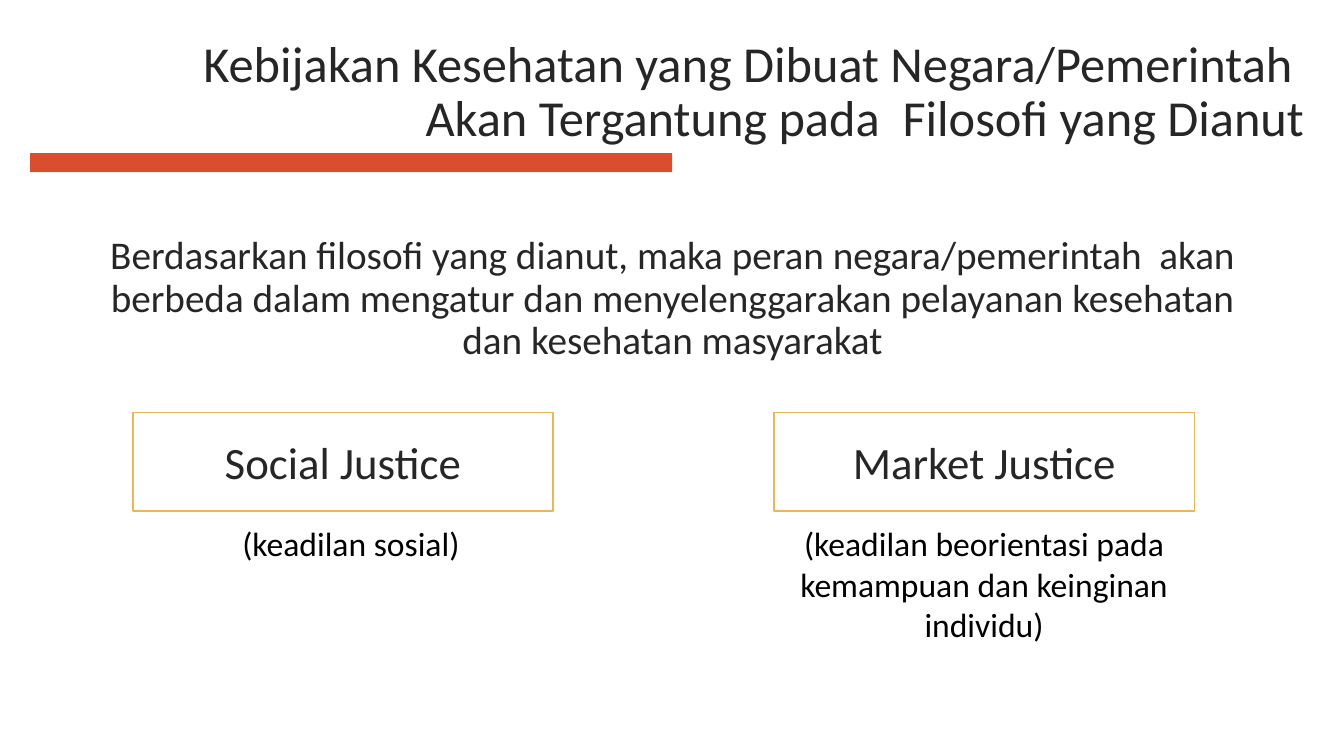
"""Build a slide on how a state's philosophy shapes its health policy."""
from pptx import Presentation
from pptx import util as u
from pptx.dml.color import RGBColor
from pptx.enum import shapes, text


def color(hex_string):
    return RGBColor.from_string(hex_string)


def write(shape, content, size, ink, align=text.PP_ALIGN.CENTER, anchor=text.MSO_ANCHOR.TOP):
    frame = shape.text_frame
    frame.word_wrap = True
    frame.vertical_anchor = anchor
    paragraph = frame.paragraphs[0]
    paragraph.text = content
    paragraph.alignment = align
    paragraph.font.name = "Calibri"
    paragraph.font.size = u.Pt(size)
    paragraph.font.color.rgb = color(ink)
    return paragraph


DARK = "262626"
MIDDLE = text.MSO_ANCHOR.MIDDLE

presentation = Presentation()
presentation.slide_width = u.Cm(33.87)
presentation.slide_height = u.Cm(19.05)
slide = presentation.slides.add_slide(presentation.slide_layouts[6])

title = slide.shapes.add_textbox(u.Cm(3.91), u.Cm(0.51), u.Cm(29.21), u.Cm(3.68))
heading = write(
    title,
    "Kebijakan Kesehatan yang Dibuat Negara/Pemerintah  Akan Tergantung pada  Filosofi yang Dianut",
    36, DARK, text.PP_ALIGN.RIGHT, MIDDLE,
)
heading.line_spacing = 0.9

body = slide.shapes.add_textbox(u.Cm(2.34), u.Cm(5.82), u.Cm(29.21), u.Cm(11.35))
statement = write(
    body,
    "Berdasarkan filosofi yang dianut, maka peran negara/pemerintah  akan berbeda dalam "
    "mengatur dan menyelenggarakan pelayanan kesehatan dan kesehatan masyarakat",
    28, DARK,
)
statement.line_spacing = 0.9
statement.space_before = u.Pt(10)

bar = slide.shapes.add_shape(
    shapes.MSO_SHAPE.RECTANGLE, u.Cm(0.76), u.Cm(3.86), u.Cm(16.18), u.Cm(0.48)
)
bar.shadow.inherit = False
bar.fill.solid()
bar.fill.fore_color.rgb = color("D84E2E")
bar.line.fill.background()

philosophies = [
    ("Social Justice", 3.35, "(keadilan sosial)", 5.82, 6.05, 1.27),
    ("Market Justice", 19.51, "(keadilan beorientasi pada kemampuan dan keinginan individu)",
     19.02, 11.56, 3.33),
]
for name, box_left, meaning, caption_left, caption_width, caption_height in philosophies:
    box = slide.shapes.add_shape(
        shapes.MSO_SHAPE.RECTANGLE, u.Cm(box_left), u.Cm(10.39), u.Cm(10.59), u.Cm(2.49)
    )
    box.shadow.inherit = False
    box.fill.background()
    box.line.color.rgb = color("EBB55A")
    box.line.width = u.Pt(1)
    write(box, name, 32, DARK, anchor=MIDDLE)

    caption = slide.shapes.add_textbox(
        u.Cm(caption_left), u.Cm(13.06), u.Cm(caption_width), u.Cm(caption_height)
    )
    write(caption, meaning, 24, "000000")

presentation.save("out.pptx")
